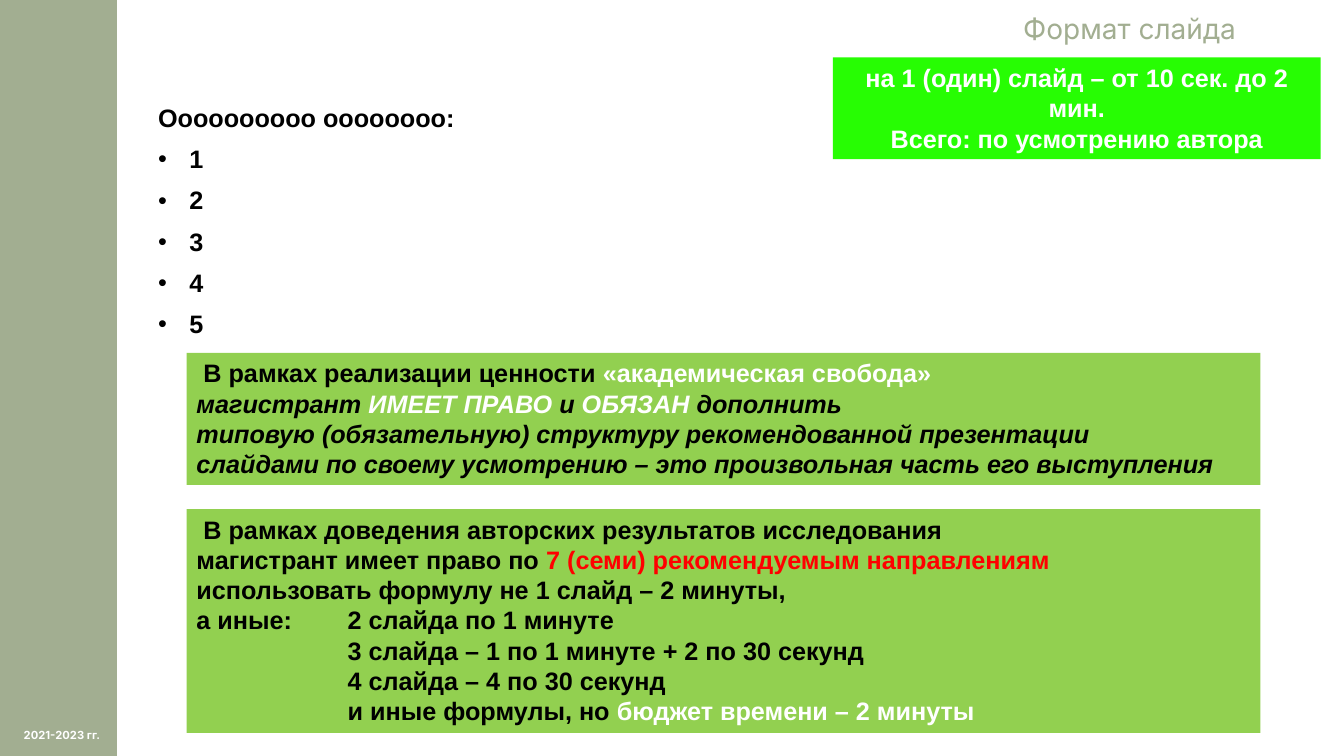
from dataclasses import dataclass

from lxml.etree import SubElement
from pptx import Presentation
from pptx.dml.color import RGBColor as RGB
from pptx.enum.shapes import MSO_SHAPE as Shape
from pptx.enum.text import MSO_ANCHOR as Anchor, PP_ALIGN as Align
from pptx.oxml.ns import qn
from pptx.util import Inches, Pt


@dataclass(frozen=True)
class Theme:
    sage: str = "A2AE91"
    green: str = "92D050"
    lime: str = "27FD03"
    white: str = "FFFFFF"
    black: str = "000000"
    red: str = "FF0000"
    sans: str = "Arial"
    brand: str = "Inter"
    title: int = 20
    body: int = 18
    small: int = 8


T = Theme()


def add_rect(slide, box, color):
    rect = slide.shapes.add_shape(Shape.RECTANGLE, *map(Inches, box))
    rect.shadow.inherit = False
    rect.fill.solid()
    rect.fill.fore_color.rgb = RGB.from_string(color)
    rect.line.fill.background()
    return rect


def add_label(slide, box):
    return slide.shapes.add_textbox(*map(Inches, box))


def add_bullet(para, indent):
    props = para._p.get_or_add_pPr()
    props.set("marL", str(Inches(indent)))
    props.set("indent", str(-Inches(indent)))
    SubElement(props, qn("a:buFont"), typeface=T.sans)
    SubElement(props, qn("a:buChar"), char="•")


def add_tab(para, stop):
    tabs = SubElement(para._p.get_or_add_pPr(), qn("a:tabLst"))
    SubElement(tabs, qn("a:tab"), pos=str(Inches(stop)), algn="l")


def write(shape, lines, size=T.body, font=T.sans, color=T.black, bold=True,
          align=Align.LEFT, anchor=Anchor.TOP, inset=(0.1, 0.05),
          spacing=None, before=0, bullet=0, tab=0, italic=()):
    """Each line is a string or a list of strings and (string, color) pairs.

    bullet indents every line but the first; italic holds line numbers.
    """
    frame = shape.text_frame
    frame.word_wrap = True
    frame.vertical_anchor = anchor
    frame.margin_left = frame.margin_right = Inches(inset[0])
    frame.margin_top = frame.margin_bottom = Inches(inset[1])
    for n, line in enumerate(lines):
        para = frame.paragraphs[0] if n == 0 else frame.add_paragraph()
        if bullet and n:
            add_bullet(para, bullet)
        if tab and "\t" in "".join(p if isinstance(p, str) else p[0] for p in line):
            add_tab(para, tab)
        para.alignment = align
        if spacing:
            para.line_spacing = spacing
        if before and n:
            para.space_before = Pt(before)
        for part in [line] if isinstance(line, str) else line:
            text, tint = (part, color) if isinstance(part, str) else part
            run = para.add_run()
            run.text = text
            run.font.name = font
            run.font.size = Pt(size)
            run.font.bold = bold
            run.font.italic = n in italic
            run.font.color.rgb = RGB.from_string(tint)


def add_side(slide, left, top, width, height):
    add_rect(slide, (left, top, width, height), T.sage)
    foot = 0.41
    label = add_label(slide, (left + 0.07, top + height - foot, width - 0.07, foot))
    write(label, ["2021-2023 гг."], size=T.small, font=T.brand, color=T.white,
          align=Align.CENTER, anchor=Anchor.MIDDLE)


def add_title(slide, *box):
    write(add_label(slide, box), ["Формат слайда"], size=T.title, font=T.brand,
          color=T.sage, bold=False, align=Align.RIGHT, inset=(0, 0), spacing=0.9)


def add_list(slide, *box):
    lines = ["Оооооооооо оооооооо:"] + [str(n) for n in range(1, 6)]
    write(add_label(slide, box), lines, spacing=0.9, before=10, bullet=0.31)


def add_timing(slide, *box):
    write(add_rect(slide, box, T.lime),
          ["на 1 (один) слайд – от 10 сек. до 2 мин.", "Всего: по усмотрению автора"],
          color=T.white, align=Align.CENTER)


def add_notes(slide, left, top, width):
    """Two green panels, one under the other."""
    high, low, gap = 1.31, 2.22, 0.24
    freedom = [
        [" В рамках реализации ценности ", ("«академическая свобода»", T.white)],
        ["магистрант ", ("ИМЕЕТ ПРАВО ", T.white), "и ", ("ОБЯЗАН", T.white),
         " дополнить"],
        "типовую (обязательную) структуру рекомендованной презентации",
        "слайдами по своему усмотрению – это произвольная часть его выступления",
    ]
    budget = [
        " В рамках доведения авторских результатов исследования",
        ["магистрант имеет право по ", ("7 (семи) рекомендуемым направлениям", T.red)],
        "использовать формулу не 1 слайд – 2 минуты,",
        "а иные: \t2 слайда по 1 минуте",
        "\t3 слайда – 1 по 1 минуте + 2 по 30 секунд",
        "\t4 слайда – 4 по 30 секунд",
        ["\tи иные формулы, но ", ("бюджет времени – 2 минуты", T.white)],
    ]
    write(add_rect(slide, (left, top, width, high), T.green), freedom, italic=(1, 2, 3))
    write(add_rect(slide, (left, top + high + gap, width, low), T.green), budget, tab=1.5)


def main():
    deck = Presentation()
    deck.slide_width, deck.slide_height = Inches(13.33), Inches(7.5)
    slide = deck.slides.add_slide(deck.slide_layouts[6])
    add_side(slide, 0, 0, 1.16, 7.5)
    add_list(slide, 1.47, 1, 11.46, 5.8)
    add_timing(slide, 8.26, 0.57, 4.84, 1.01)
    add_notes(slide, 1.85, 3.5, 10.65)
    add_title(slide, 1.35, 0.15, 10.91, 0.39)
    deck.save("out.pptx")


if __name__ == "__main__":
    main()
